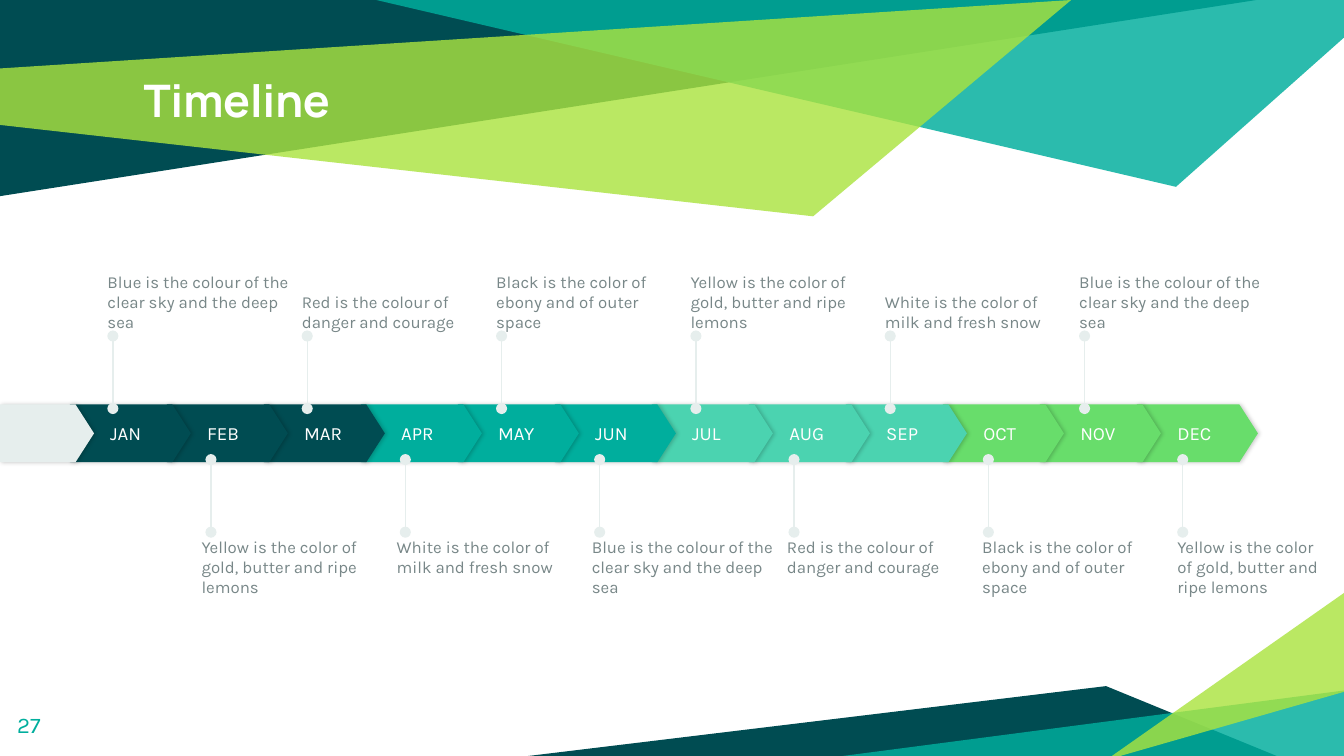
from dataclasses import dataclass
from lxml import etree
from pptx import Presentation
from pptx import util as u
from pptx.dml.color import RGBColor
from pptx.enum import shapes, text
from pptx.oxml import ns


@dataclass(frozen=True)
class Theme:
    dark: str = "004C52"
    teal: str = "00AE9D"
    mint: str = "4BD3B0"
    green: str = "68DD6B"
    lime: str = "ABE33F"
    pale: str = "E6EEED"
    gray: str = "788788"
    white: str = "FFFFFF"
    head: str = "Manrope"
    body: str = "Karla"
    title: int = 24
    page: int = 12
    month: int = 10
    note: int = 9


T = Theme()
WIDE, HIGH = 10, 10 * 9 / 16
MONTHS = "JAN FEB MAR APR MAY JUN JUL AUG SEP OCT NOV DEC".split()
BLUE = "Blue is the colour of the clear sky and the deep sea"
RED = "Red is the colour of danger and courage"
BLACK = "Black is the color of ebony and of outer space"
YELLOW = "Yellow is the color of gold, butter and ripe lemons"
WHITE = "White is the color of milk and fresh snow"
UPPER = [BLUE, RED, BLACK, YELLOW, WHITE, BLUE]
LOWER = [YELLOW, WHITE, BLUE, RED, BLACK, YELLOW]


def node(parent, tag, **attrs):
    return etree.SubElement(parent, ns.qn(tag), attrs)


def place(box):
    return [u.Inches(v) for v in box]


def paint(shape, color, alpha=100):
    shape.shadow.inherit = False
    shape.fill.solid()
    shape.fill.fore_color.rgb = RGBColor.from_string(color)
    shape.line.fill.background()
    if alpha < 100:
        clr = shape.element.spPr.find(".//" + ns.qn("a:srgbClr"))
        node(clr, "a:alpha", val=str(alpha * 1000))


def write(shape, words, size, color, font=T.body, bold=False,
          anchor=text.MSO_ANCHOR.TOP, inset=(0, 0, 0, 0)):
    frame = shape.text_frame
    frame.word_wrap = True
    frame.vertical_anchor = anchor
    (frame.margin_left, frame.margin_top,
     frame.margin_right, frame.margin_bottom) = place(inset)
    para = frame.paragraphs[0]
    para.alignment = text.PP_ALIGN.LEFT
    run = para.add_run()
    run.text = words
    run.font.size = u.Pt(size)
    run.font.name = font
    run.font.bold = bold
    run.font.color.rgb = RGBColor.from_string(color)


def label(slide, box, words, **style):
    write(slide.shapes.add_textbox(*place(box)), words, **style)


def facet(slide, box, points, color, alpha=100):
    """Draw a polygon whose points are relative to the box corner."""
    pts = [place((box[0] + x, box[1] + y)) for x, y in points]
    pen = slide.shapes.build_freeform(*pts[0], scale=1.0)
    pen.add_line_segments(pts[1:], close=True)
    paint(pen.convert_to_shape(), color, alpha)


def banner(slide, box):
    facet(slide, box, [(0, 0), (0, 1.46), (9.35, 0)], T.dark)
    facet(slide, box, [(2.8, 0), (8.75, 1.39), (10, 0.28), (10, 0)],
          T.teal, 83)
    facet(slide, box, [(-0.01, 0.51), (0, 0.93), (6.05, 1.61), (7.97, 0)],
          T.lime, 81)
    label(slide, (box[0] + 0.97, box[1] + 0.44, 8.06, 0.94), "Timeline",
          size=T.title, color=T.white, font=T.head, bold=True,
          inset=[0.1] * 4)


def footer(slide, box):
    facet(slide, box, [(3.93, 1.22), (9.5, 1.22), (8.23, 0.7)], T.dark)
    facet(slide, box, [(10.02, 0.73), (10.02, 1.25), (6.04, 1.25)],
          T.teal, 83)
    facet(slide, box, [(10.01, 0.74), (10.01, 0), (8.23, 1.25)], T.lime, 81)
    label(slide, (box[0] + 0.03, box[1] + 0.79, 0.6, 0.43), "27",
          size=T.page, color=T.teal, inset=[0.1] * 4)


def arrow(slide, box, color):
    shape = slide.shapes.add_shape(shapes.MSO_SHAPE.PENTAGON, *place(box))
    shape.adjustments[0] = 0.32
    paint(shape, color)
    glow = node(shape.element.spPr.find(ns.qn("a:effectLst")), "a:outerShdw",
                blurRad=str(u.Pt(2.2)), dist=str(u.Pt(0.8)), dir="0",
                algn="ctr", rotWithShape="0")
    node(node(glow, "a:srgbClr", val="000000"), "a:alpha", val="20000")
    return shape


def months(slide, box):
    """Lay the arrows from right to left so that each covers the next."""
    left, top, width, high = box
    tints = [T.dark, T.teal, T.mint, T.green]
    start, wide = 0.52, 0.9
    step = (width - start - wide) / (len(MONTHS) - 1)
    for i, name in reversed(list(enumerate(MONTHS))):
        shape = arrow(slide, (left + start + i * step, top, wide, high),
                      tints[i // 3])
        write(shape, name, T.month, T.white, inset=(0.3, 0, 0, 0),
              anchor=text.MSO_ANCHOR.MIDDLE)
    arrow(slide, (left, top, 0.7, high), T.pale)


def stem(slide, x, top, end):
    line = slide.shapes.add_connector(shapes.MSO_CONNECTOR.STRAIGHT,
                                      *place((x, top, x, end)))
    line.line.width = u.Pt(0.75)
    line.line.color.rgb = RGBColor.from_string(T.pale)
    props = line.element.spPr
    for tag in ("a:headEnd", "a:tailEnd"):
        node(props.find(ns.qn("a:ln")), tag, type="oval")
    node(props, "a:effectLst")


def notes(slide, box, words, first, gap, stems, anchor):
    """Spread notes over the box, with evenly spaced stems from x = first."""
    left, top, width, high = box
    wide, right = 1.37, left + width
    for i, line in enumerate(words):
        stem(slide, first + i * 7.23 / 5, *stems)
        x = left + i * gap
        label(slide, (x, top, min(wide, right - x), high), line,
              size=T.note, color=T.gray, anchor=anchor)


def main():
    deck = Presentation()
    deck.slide_width, deck.slide_height = place((WIDE, HIGH))
    slide = deck.slides.add_slide(deck.slide_layouts[6])
    banner(slide, (0, 0, WIDE, 1.61))
    footer(slide, (0, HIGH - 1.22, WIDE, 1.22))
    months(slide, (0, 3.01, 9.36, 0.43))
    notes(slide, (0.8, 1.89, 8.6, 0.58), UPPER, 0.84, 7.23 / 5,
          (3.04, 2.5), text.MSO_ANCHOR.BOTTOM)
    notes(slide, (1.5, 3.99, 8.39, 0.58), LOWER, 1.57, 7.26 / 5,
          (3.96, 3.42), text.MSO_ANCHOR.TOP)
    deck.save("out.pptx")


if __name__ == "__main__":
    main()
